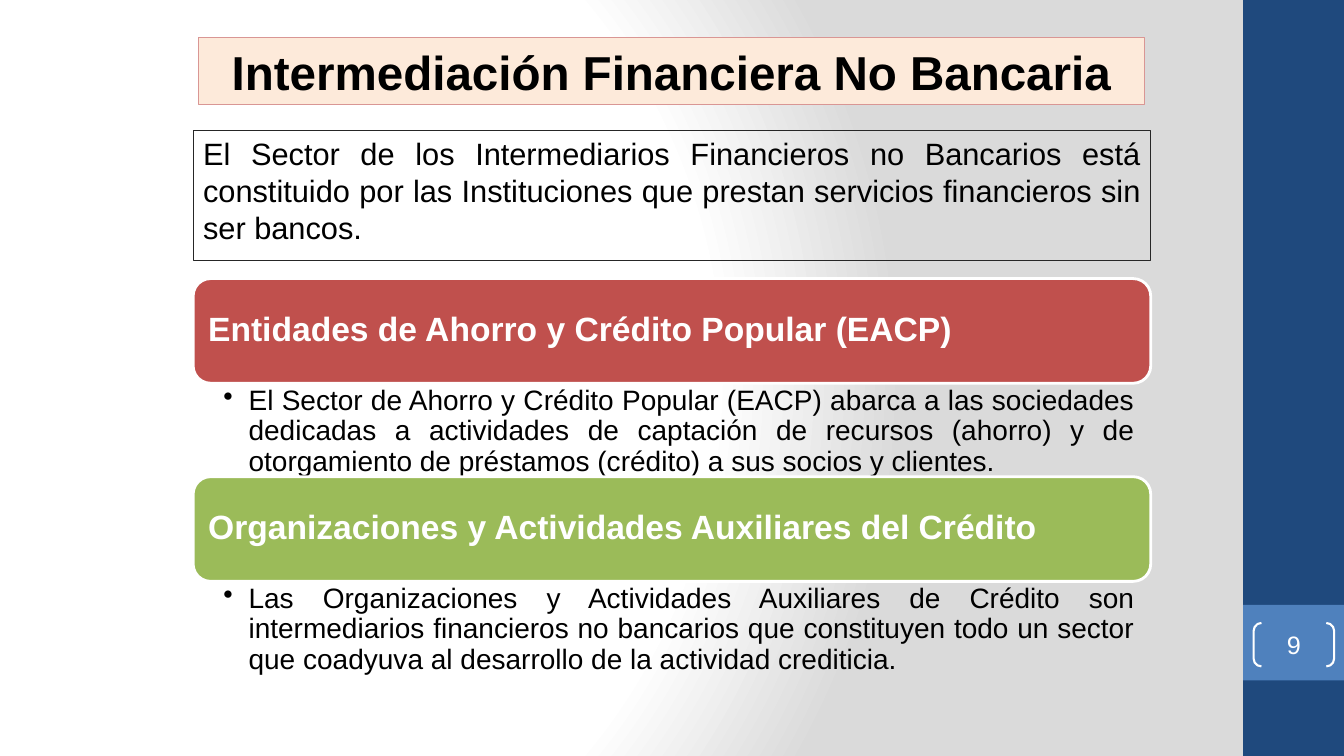
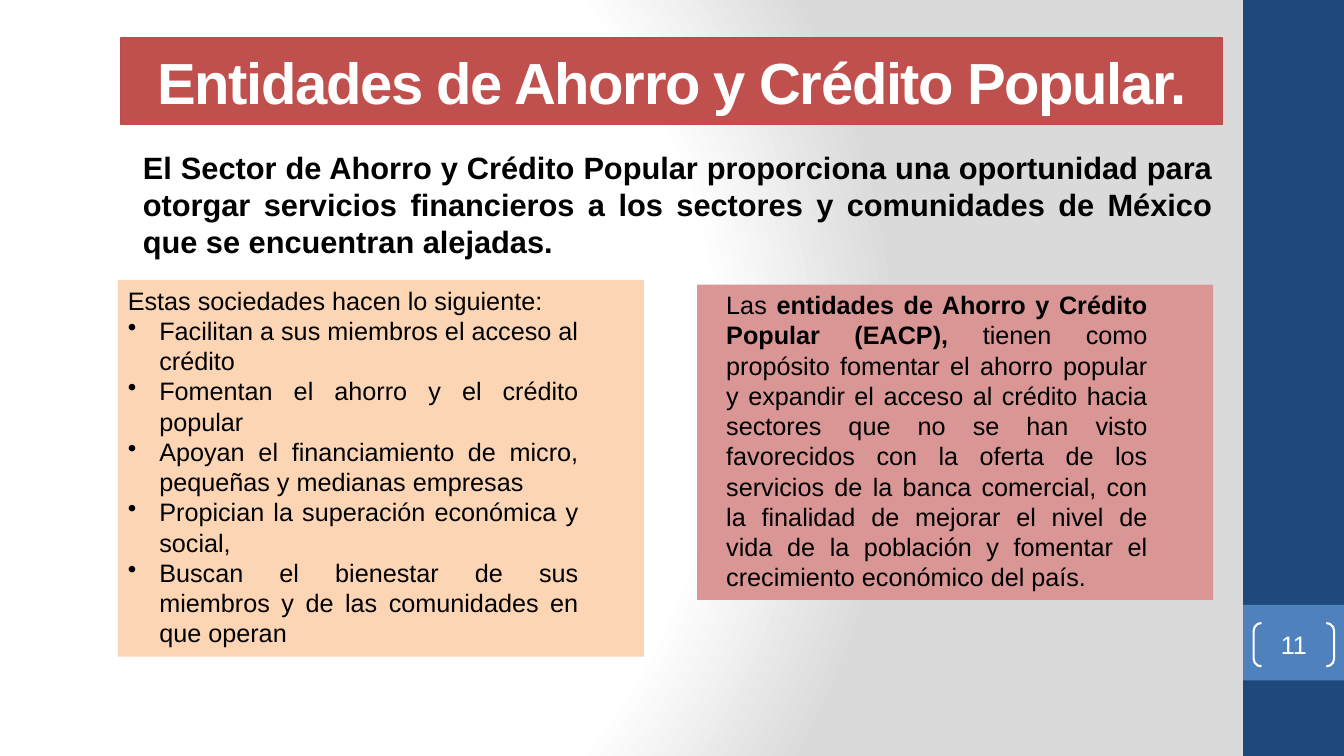
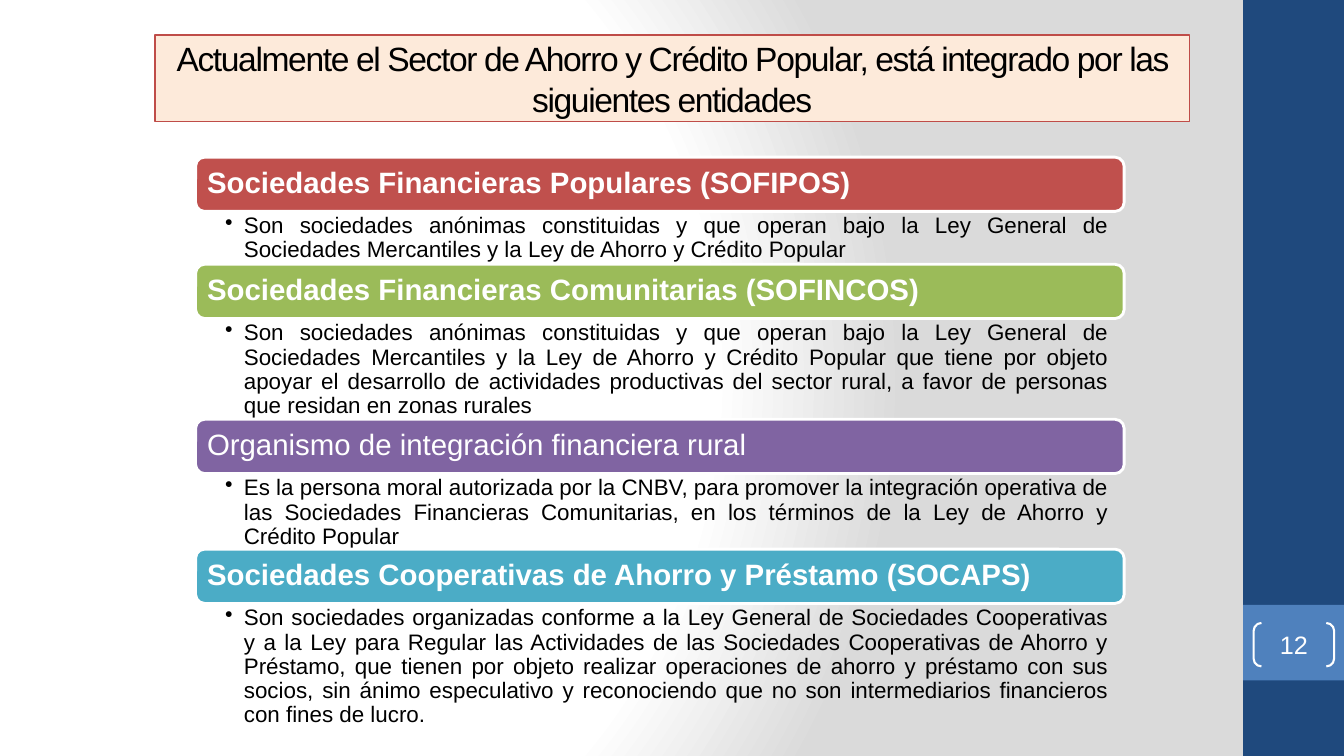
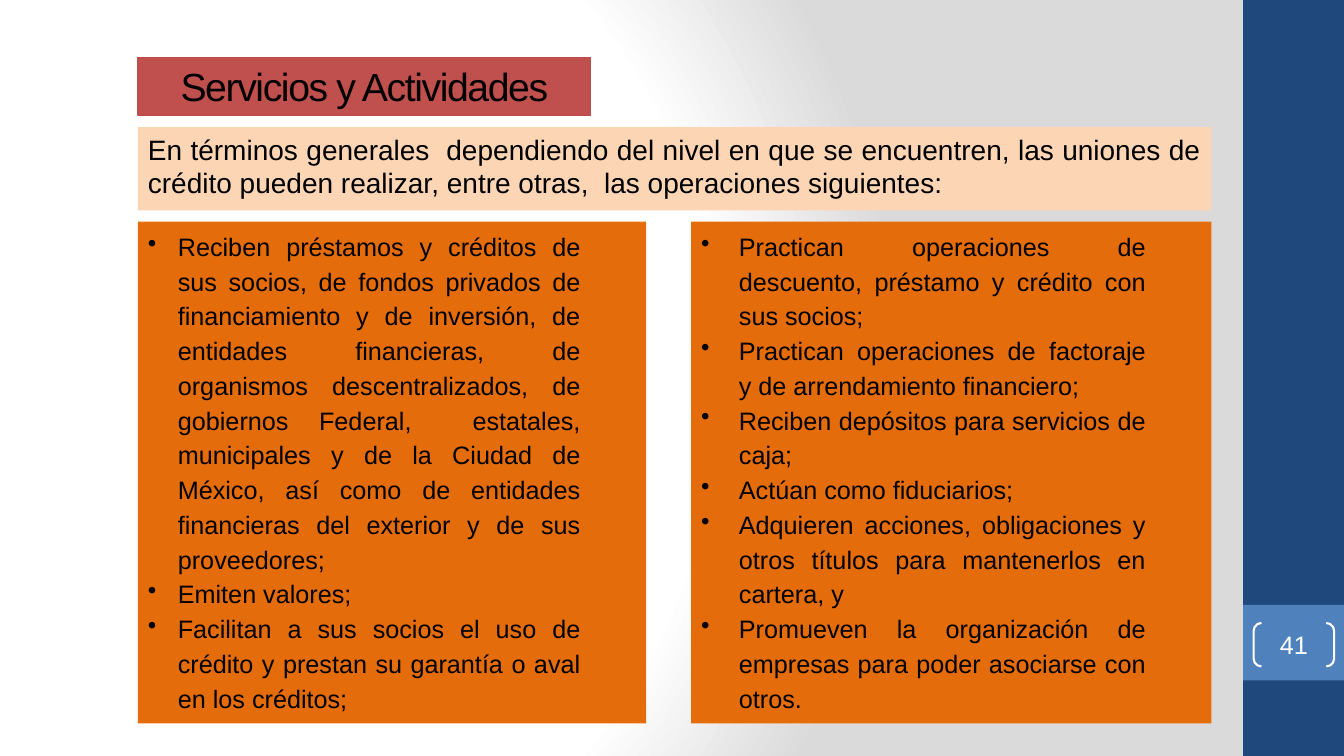
"""Build four slides on non-bank financial intermediation in Mexico."""
from dataclasses import dataclass
from typing import Any, NamedTuple, Optional

import pptx
import pptx.dml.color
import pptx.enum.shapes
import pptx.enum.text
import pptx.oxml
import pptx.oxml.ns
import pptx.util

Pt = pptx.util.Pt
SHAPE = pptx.enum.shapes.MSO_SHAPE
ALIGN = pptx.enum.text.PP_ALIGN
ANCHOR = pptx.enum.text.MSO_ANCHOR

FONT = "Arial"
BLACK, WHITE, DARK = "000000", "FFFFFF", "262626"
NAVY, BLUE = "1F497D", "4F81BD"
RED, RED_EDGE, ROSE = "C0504D", "BF4C48", "D99694"
GREEN, PURPLE, TEAL = "9BBB59", "8064A2", "4BACC6"
CREAM, PEACH, ORANGE = "FDEADA", "FCD5B5", "E46C0A"

BACKGROUND = (
    '<a:gradFill xmlns:a="http://schemas.openxmlformats.org/drawingml/2006/main" rotWithShape="1">'
    '<a:gsLst><a:gs pos="0"><a:srgbClr val="FFFFFF"/></a:gs>'
    '<a:gs pos="75000"><a:srgbClr val="FFFFFF"/></a:gs>'
    '<a:gs pos="100000"><a:srgbClr val="DADADA"/></a:gs></a:gsLst>'
    '<a:path path="circle"><a:fillToRect l="20000" t="50000" r="100000" b="50000"/></a:path>'
    '</a:gradFill>'
)


class Rect(NamedTuple):
    left: float
    top: float
    width: float
    height: float


class Insets(NamedTuple):
    left: float = 7.2
    top: float = 3.6
    right: float = 7.2
    bottom: float = 3.6


class Run(NamedTuple):
    text: str
    bold: bool = False


@dataclass(frozen=True)
class TextStyle:
    size: float
    color: str = BLACK
    align: Any = ALIGN.JUSTIFY
    anchor: Any = ANCHOR.TOP
    insets: Insets = Insets()
    line_spacing: Optional[float] = None
    before: float = 0
    tracking: int = 0


@dataclass(frozen=True)
class Para:
    runs: tuple[Run, ...]
    margin: float = 0
    bullet: bool = False


@dataclass(frozen=True)
class Look:
    fill: Optional[str] = None
    line: Optional[str] = None
    line_width: float = 0.75
    shape: Any = SHAPE.RECTANGLE


class Section(NamedTuple):
    heading: Run
    color: str
    body: str
    body_height: float


@dataclass(frozen=True)
class Stack:
    left: float
    top: float
    width: float
    bar_height: float
    heading: TextStyle
    body: TextStyle
    indent: float


COLUMN_INSETS = Insets(right=46.8)
COLUMN = TextStyle(18, insets=COLUMN_INSETS)
LOOSE_COLUMN = TextStyle(18, insets=COLUMN_INSETS, line_spacing=1.15)
INTRO = TextStyle(22, before=4.4)


def rgb(color: str) -> pptx.dml.color.RGBColor:
    """Turn a hex string into a colour."""
    return pptx.dml.color.RGBColor.from_string(color)


def para(text: str, bold: bool = False, margin: float = 0) -> Para:
    """Make a paragraph of one run."""
    return Para((Run(text, bold),), margin)


def bullets(margin: float, *texts: str) -> list[Para]:
    """Make bulleted paragraphs with a hanging indent."""
    return [Para((Run(text),), margin, True) for text in texts]


def title_style(size: float, color: str = BLACK, tracking: int = -100) -> TextStyle:
    """Make the centred style that titles share."""
    return TextStyle(size, color, ALIGN.CENTER, ANCHOR.MIDDLE, tracking=tracking)


def write(sp: Any, paras: list[Para], style: TextStyle) -> None:
    """Fill a shape with paragraphs, run by run."""
    tf = sp.text_frame
    tf.word_wrap = True
    tf.vertical_anchor = style.anchor
    tf.margin_left, tf.margin_top, tf.margin_right, tf.margin_bottom = map(Pt, style.insets)
    for i, item in enumerate(paras):
        p = tf.add_paragraph() if i else tf.paragraphs[0]
        p.alignment = style.align
        p.space_before = Pt(style.before)
        if style.line_spacing:
            p.line_spacing = style.line_spacing
        ppr = p._p.get_or_add_pPr()
        ppr.set("marL", str(int(Pt(item.margin))))
        ppr.set("indent", str(-int(Pt(item.margin)) if item.bullet else 0))
        if item.bullet:
            mark = ppr.makeelement(pptx.oxml.ns.qn("a:buChar"), {"char": "•"})
            ppr.append(mark)
        for run in item.runs:
            r = p.add_run()
            r.text = run.text
            r.font.name = FONT
            r.font.size = Pt(style.size)
            r.font.bold = run.bold
            r.font.color.rgb = rgb(style.color)
            if style.tracking:
                r._r.get_or_add_rPr().set("spc", str(style.tracking))


def add_panel(s: Any, rect: Rect, look: Look) -> Any:
    """Add a preset shape without shadow."""
    sp = s.shapes.add_shape(look.shape, *map(Pt, rect))
    sp.shadow.inherit = False
    if look.fill:
        sp.fill.solid()
        sp.fill.fore_color.rgb = rgb(look.fill)
    else:
        sp.fill.background()
    if look.line:
        sp.line.color.rgb = rgb(look.line)
        sp.line.width = Pt(look.line_width)
    else:
        sp.line.fill.background()
    return sp


def add_box(s: Any, rect: Rect, look: Look, paras: list[Para], style: TextStyle) -> None:
    """Add a panel with text."""
    write(add_panel(s, rect, look), paras, style)


def add_text(s: Any, rect: Rect, paras: list[Para], style: TextStyle) -> None:
    """Add a plain text box."""
    write(s.shapes.add_textbox(*map(Pt, rect)), paras, style)


def add_stack(s: Any, stack: Stack, sections: list[Section]) -> None:
    """Add coloured heading bars, each followed by its bulleted text."""
    top = stack.top
    for section in sections:
        bar = Rect(stack.left, top, stack.width, stack.bar_height)
        look = Look(section.color, WHITE, 2, SHAPE.ROUNDED_RECTANGLE)
        add_box(s, bar, look, [Para((section.heading,))], stack.heading)
        top += stack.bar_height
        body = Rect(stack.left, top, stack.width, section.body_height)
        add_text(s, body, bullets(stack.indent, section.body), stack.body)
        top += section.body_height


def stack_styles(heading: float, inset: float, body: float, left: float) -> tuple[TextStyle, TextStyle]:
    """Make the heading and body styles of a stack."""
    return (
        TextStyle(heading, WHITE, ALIGN.LEFT, ANCHOR.MIDDLE, Insets(*[inset] * 4), 0.9),
        TextStyle(body, insets=Insets(left, 2.2, 11.4, 2.2), line_spacing=0.9),
    )


def new_slide(prs: Any, number: int) -> Any:
    """Add a blank slide with the side bands and its number."""
    s = prs.slides.add_slide(prs.slide_layouts[6])
    add_panel(s, Rect(888, 0, 72, 540), Look(NAVY))
    add_panel(s, Rect(888, 432, 72, 54), Look(BLUE))
    bracket = add_panel(s, Rect(895.5, 445, 57.5, 31), Look(None, WHITE, 1.5, SHAPE.DOUBLE_BRACKET))
    bracket.adjustments[0] = 0.18
    style = TextStyle(18, WHITE, ALIGN.CENTER, ANCHOR.MIDDLE, Insets(0, 0, 0, 0))
    write(bracket, [para(str(number))], style)
    return s


def set_background(prs: Any) -> None:
    """Give the master its radial gradient."""
    master = prs.slide_master
    master.background.fill.gradient()
    old = master.element.find(".//" + pptx.oxml.ns.qn("a:gradFill"))
    old.getparent().replace(old, pptx.oxml.parse_xml(BACKGROUND))


def build_intermediation(prs: Any) -> None:
    """Build the slide on non-bank intermediation."""
    s = new_slide(prs, 9)
    add_box(s, Rect(138, 93, 684, 93), Look(None, DARK), [para(
        "El Sector de los Intermediarios Financieros no Bancarios está constituido por las "
        "Instituciones que prestan servicios financieros sin ser bancos.")], INTRO)
    add_box(s, Rect(142, 27, 675.5, 48), Look(CREAM, ROSE),
            [para("Intermediación Financiera No Bancaria", True)], title_style(34, tracking=0))
    stack = Stack(138, 199, 684, 74.75, *stack_styles(24, 7.2, 20, 21.6), 18)
    add_stack(s, stack, [
        Section(Run("Entidades de Ahorro y Crédito Popular (EACP)", True), RED,
                "El Sector de Ahorro y Crédito Popular (EACP) abarca a las sociedades dedicadas a "
                "actividades de captación de recursos (ahorro) y de otorgamiento de préstamos "
                "(crédito) a sus socios y clientes.", 66.75),
        Section(Run("Organizaciones y Actividades Auxiliares del Crédito", True), GREEN,
                "Las Organizaciones y Actividades Auxiliares de Crédito son intermediarios "
                "financieros no bancarios que constituyen todo un sector que coadyuva al "
                "desarrollo de la actividad crediticia.", 66.75),
    ])


def build_entities(prs: Any) -> None:
    """Build the slide on savings and credit entities."""
    s = new_slide(prs, 11)
    add_box(s, Rect(86.4, 27, 787, 62), Look(RED, RED_EDGE, 1),
            [para("Entidades de Ahorro y Crédito Popular.", True)], title_style(41.4, WHITE))
    add_text(s, Rect(86.4, 103, 787, 95), [para(
        "El Sector de Ahorro y Crédito Popular proporciona una oportunidad para otorgar servicios "
        "financieros a los sectores y comunidades de México que se encuentran alejadas.",
        True, 8.6)], INTRO)
    add_box(s, Rect(84.25, 200, 375.75, 269), Look(PEACH), [
        para("Estas sociedades hacen lo siguiente:"),
        *bullets(
            22.5,
            "Facilitan a sus miembros el acceso al crédito",
            "Fomentan el ahorro y el crédito popular",
            "Apoyan el financiamiento de micro, pequeñas y medianas empresas",
            "Propician la superación económica y social,",
            "Buscan el bienestar de sus miembros y de las comunidades en que operan"),
    ], COLUMN)
    add_box(s, Rect(498, 203.25, 368.5, 225.25), Look(ROSE), [Para((
        Run("Las "),
        Run("entidades de Ahorro y Crédito Popular (EACP), ", True),
        Run("tienen como propósito fomentar el ahorro popular y expandir el acceso al crédito "
            "hacia sectores que no se han visto favorecidos con la oferta de los servicios de la "
            "banca comercial, con la finalidad de mejorar el nivel de vida de la población y "
            "fomentar el crecimiento económico del país."),
    ), 13.7)], COLUMN)


def build_sector(prs: Any) -> None:
    """Build the slide on the members of the sector."""
    s = new_slide(prs, 12)
    add_box(s, Rect(110.75, 25, 738.75, 62), Look(CREAM, RED_EDGE, 1), [para(
        "Actualmente el Sector de Ahorro y Crédito Popular, está integrado por las siguientes "
        "entidades")], title_style(24))
    stack = Stack(139.75, 112.25, 663.25, 38.75, *stack_styles(21, 6.3, 16, 21), 13.5)
    add_stack(s, stack, [
        Section(Run("Sociedades Financieras Populares (SOFIPOS)", True), RED,
                "Son sociedades anónimas constituidas y que operan bajo la Ley General de "
                "Sociedades Mercantiles y la Ley de Ahorro y Crédito Popular", 37.75),
        Section(Run("Sociedades Financieras Comunitarias (SOFINCOS)", True), GREEN,
                "Son sociedades anónimas constituidas y que operan bajo la Ley General de "
                "Sociedades Mercantiles y la Ley de Ahorro y Crédito Popular que tiene por objeto "
                "apoyar el desarrollo de actividades productivas del sector rural, a favor de "
                "personas que residan en zonas rurales", 72),
        Section(Run("Organismo de integración financiera rural"), PURPLE,
                "Es la persona moral autorizada por la CNBV, para promover la integración "
                "operativa de las Sociedades Financieras Comunitarias, en los términos de la Ley "
                "de Ahorro y Crédito Popular", 54),
        Section(Run("Sociedades Cooperativas de Ahorro y Préstamo (SOCAPS)", True), TEAL,
                "Son sociedades organizadas conforme a la Ley General de Sociedades Cooperativas "
                "y a la Ley para Regular las Actividades de las Sociedades Cooperativas de Ahorro "
                "y Préstamo, que tienen por objeto realizar operaciones de ahorro y préstamo con "
                "sus socios, sin ánimo especulativo y reconociendo que no son intermediarios "
                "financieros con fines de lucro.", 87),
    ])


def build_services(prs: Any) -> None:
    """Build the slide on services of credit unions."""
    s = new_slide(prs, 41)
    add_box(s, Rect(98.5, 41, 323.5, 41.25), Look(RED, RED_EDGE, 1),
            [para("Servicios y Actividades")], title_style(28))
    add_box(s, Rect(98.5, 90.75, 766.75, 59.5), Look(PEACH), [para(
        "En términos generales  dependiendo del nivel en que se encuentren, las uniones de "
        "crédito pueden realizar, entre otras,  las operaciones siguientes:")],
        TextStyle(20, before=4))
    add_box(s, Rect(98.5, 158.25, 363, 358.5), Look(ORANGE), bullets(
        21.5,
        "Reciben préstamos y créditos de sus socios, de fondos privados de financiamiento y de "
        "inversión, de entidades financieras, de organismos descentralizados, de gobiernos "
        "Federal,  estatales, municipales y de la Ciudad de México, así como de entidades "
        "financieras del exterior y de sus proveedores;",
        "Emiten valores;",
        "Facilitan a sus socios el uso de crédito y prestan su garantía o aval en los créditos;",
    ), LOOSE_COLUMN)
    add_box(s, Rect(493.75, 158.25, 371.5, 358.5), Look(ORANGE), bullets(
        27,
        "Practican operaciones de descuento, préstamo y crédito con sus socios;",
        "Practican operaciones de factoraje y de arrendamiento financiero;",
        "Reciben depósitos para servicios de caja;",
        "Actúan como fiduciarios;",
        "Adquieren acciones, obligaciones y otros títulos para mantenerlos en cartera, y",
        "Promueven la organización de empresas para poder asociarse con otros.",
    ), LOOSE_COLUMN)


def main() -> None:
    """Build and save the presentation."""
    prs = pptx.Presentation()
    prs.slide_width, prs.slide_height = Pt(960), Pt(540)
    set_background(prs)
    for build in (build_intermediation, build_entities, build_sector, build_services):
        build(prs)
    prs.save("out.pptx")


if __name__ == "__main__":
    main()
